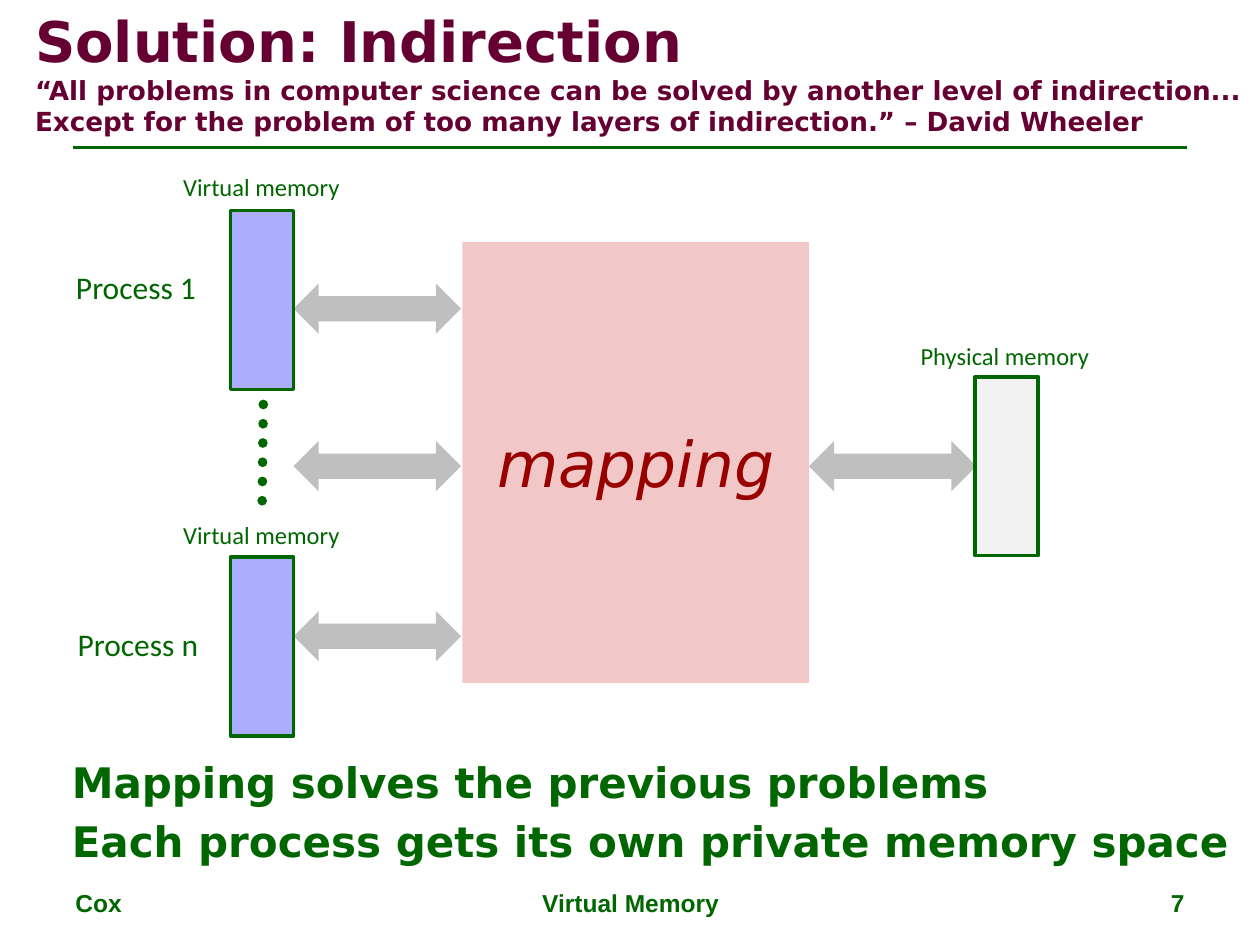
from lxml import etree
from pptx import Presentation
from pptx.dml.color import RGBColor
from pptx.enum import dml, shapes, text
from pptx.oxml import ns
from pptx.util import Inches, Pt

GREEN = RGBColor(0x00, 0x66, 0x00)
PLUM = RGBColor(0x66, 0x00, 0x33)
RED = RGBColor(0x99, 0x00, 0x00)
PINK = RGBColor(0xF1, 0xC7, 0xC7)
GRAY = RGBColor(0xBF, 0xBF, 0xBF)
LILAC = RGBColor(0xAD, 0xAD, 0xFF)
PALE = RGBColor(0xF2, 0xF2, 0xF2)
LEFT, CENTER, RIGHT = text.PP_ALIGN.LEFT, text.PP_ALIGN.CENTER, text.PP_ALIGN.RIGHT

prs = Presentation()
prs.slide_width, prs.slide_height = Inches(10), Inches(7.5)
slide = prs.slides.add_slide(prs.slide_layouts[6])


def add_label(words, x, y, w, h, size, font, align=LEFT, bold=False, wrap=True):
    frame = slide.shapes.add_textbox(Inches(x), Inches(y), Inches(w), Inches(h)).text_frame
    frame.word_wrap = wrap
    frame.text = words
    for paragraph in frame.paragraphs:
        paragraph.alignment = align
        for run in paragraph.runs:
            run.font.size, run.font.name, run.font.bold = Pt(size), font, bold
            run.font.color.rgb = GREEN
    return frame


def add_block(kind, x, y, w, h, fill, outlined=False):
    block = slide.shapes.add_shape(kind, Inches(x), Inches(y), Inches(w), Inches(h))
    block.shadow.inherit = False
    block.fill.solid()
    block.fill.fore_color.rgb = fill
    if outlined:
        block.line.color.rgb, block.line.width = GREEN, Pt(2)
    else:
        block.line.fill.background()
    return block


# Title with the quotation under it
title = add_label(
    "Solution: Indirection\v“All problems in computer science can be solved by another level of "
    "indirection... Except for the problem of too many layers of indirection.” – David Wheeler",
    0.18, 0.14, 10.32, 0.86, 15, "DejaVu Sans", bold=True)
title.vertical_anchor = text.MSO_ANCHOR.MIDDLE
for run in title.paragraphs[0].runs:
    run.font.color.rgb = PLUM
title.paragraphs[0].runs[0].font.size = Pt(32)

# Conclusions
conclusions = add_label(
    "Mapping solves the previous problems\nEach process gets its own private memory space",
    0.57, 6, 9.43, 1.08, 24, "DejaVu Sans", bold=True)
conclusions.margin_left = conclusions.margin_right = 0
conclusions.margin_top = conclusions.margin_bottom = 0
conclusions.paragraphs[1].space_before = Pt(5)

# Memory and process labels
for words, x, y, w, h, size in [
    ("Physical memory", 7.18, 2.66, 1.59, 0.34, 14),
    ("Virtual memory", 1.33, 1.32, 1.49, 0.34, 14),
    ("Virtual memory", 1.33, 4.08, 1.49, 0.34, 14),
    ("Process 1", 0.5, 2.08, 1.16, 0.4, 18),
    ("Process n", 0.51, 4.91, 1.17, 0.4, 18),
]:
    add_label(words, x, y, w, h, size, "Calibri", CENTER, wrap=False)

# Mapping box
mapping = add_block(shapes.MSO_SHAPE.RECTANGLE, 3.67, 1.92, 2.75, 3.5, PINK).text_frame
mapping.text = "mapping"
mapping.vertical_anchor = text.MSO_ANCHOR.MIDDLE
mapping.paragraphs[0].alignment = CENTER
mapping_font = mapping.paragraphs[0].runs[0].font
mapping_font.size, mapping_font.name, mapping_font.italic = Pt(36), "DejaVu Sans", True
mapping_font.color.rgb = RED

# Arrows between the memories and the mapping
for x, y in [(2.33, 2.25), (2.33, 4.85), (2.33, 3.5), (6.42, 3.5)]:
    add_block(shapes.MSO_SHAPE.LEFT_RIGHT_ARROW, x, y, 1.33, 0.4, GRAY)

# Virtual and physical memories
for x, y, fill in [(1.83, 1.67, LILAC), (1.83, 4.42, LILAC), (7.74, 2.99, PALE)]:
    add_block(shapes.MSO_SHAPE.RECTANGLE, x, y, 0.5, 1.42, fill, outlined=True)

# Rule under the title, and dots standing for the processes in between
for x1, y1, x2, y2, width, dotted in [
    (0.58, 1.17, 9.42, 1.17, 1.5, False),
    (2.09, 3.21, 2.08, 4.03, 5.5, True),
]:
    rule = slide.shapes.add_connector(
        shapes.MSO_CONNECTOR.STRAIGHT, Inches(x1), Inches(y1), Inches(x2), Inches(y2))
    rule.line.color.rgb, rule.line.width = GREEN, Pt(width)
    if dotted:
        rule.line.dash_style = dml.MSO_LINE.ROUND_DOT
        rule.line._get_or_add_ln().set("cap", "rnd")
    etree.SubElement(rule._element.spPr, ns.qn("a:effectLst"))

# Footer
for words, x, w, align in [
    ("Cox", 0.5, 2.33, LEFT),
    ("Virtual Memory", 3.42, 3.17, CENTER),
    ("7", 7.17, 2.33, RIGHT),
]:
    add_label(words, x, 7, w, 0.35, 14, "Arial", align, bold=True)

prs.save("out.pptx")
